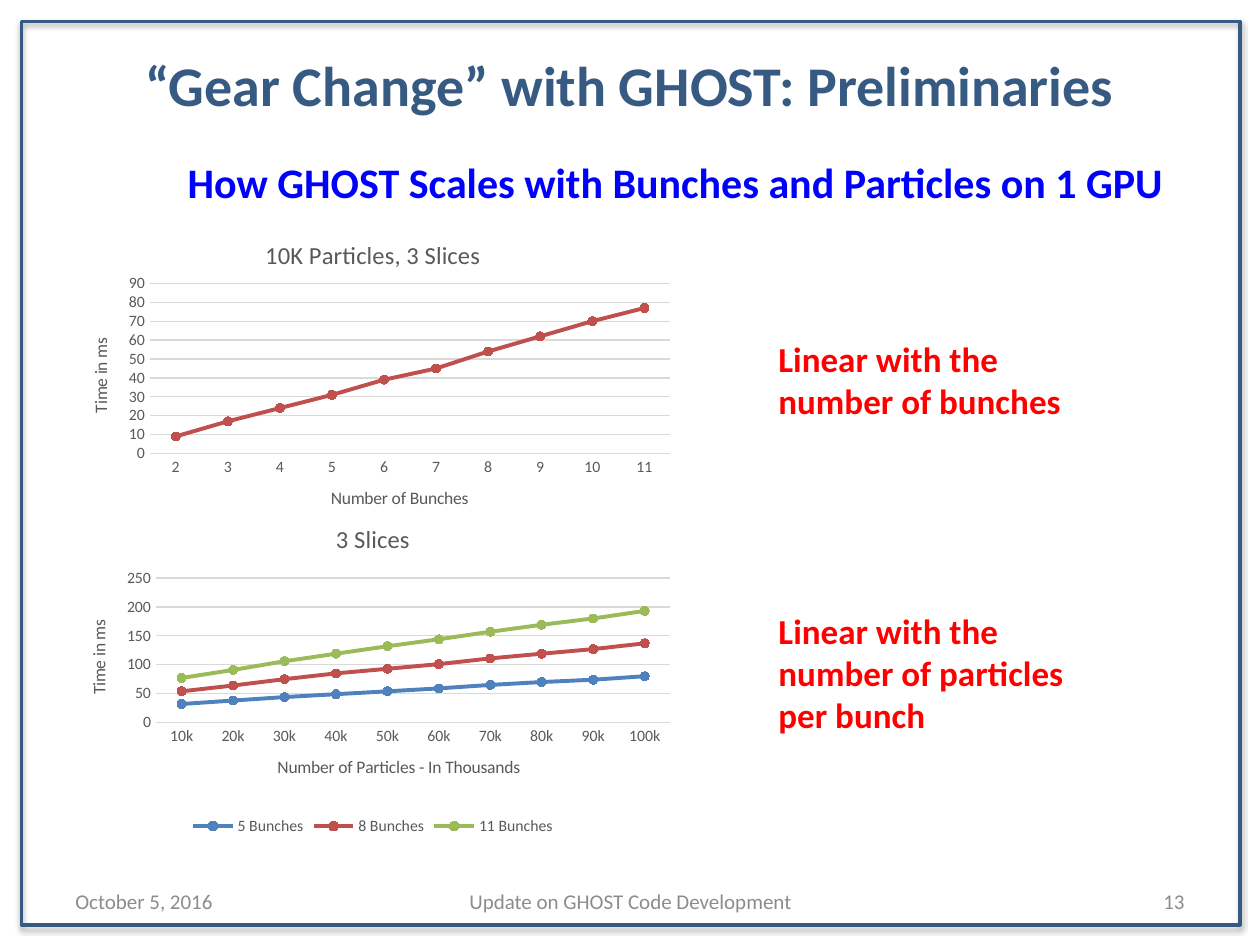
from lxml import etree
from pptx import Presentation
from pptx.chart.data import CategoryChartData
from pptx.dml.color import RGBColor
from pptx.enum.chart import XL_CHART_TYPE, XL_LEGEND_POSITION, XL_MARKER_STYLE, XL_TICK_MARK
from pptx.enum.shapes import MSO_SHAPE
from pptx.enum.text import MSO_ANCHOR, PP_ALIGN
from pptx.oxml import parse_xml
from pptx.oxml.ns import nsdecls, qn
from pptx.util import Inches, Pt

THEME = {
    "font": "Calibri",
    "navy": "365A82", "blue": "0000FF", "red": "FF0000", "footer": "8C8C8C",
    "label": "595959", "grid": "D9D9D9",
    "series_blue": "4F81BD", "series_red": "C0504D", "series_green": "9BBB59",
    "title_size": 32, "subtitle_size": 24, "note_size": 20, "footer_size": 12,
    "chart_title_size": 14, "axis_title_size": 10, "label_size": 9,
}

# Content: text box as lines, box, style, format values of the text frame
MIDDLE = {"vertical_anchor": MSO_ANCHOR.MIDDLE, "word_wrap": True}
TEXTS = [
    (["“Gear Change” with GHOST: Preliminaries"], (0, 0.36, 10, 0.64),
     ("title_size", "navy", True, PP_ALIGN.CENTER),
     {**MIDDLE, "margin_top": Inches(0.02)}),
    (["October 5, 2016"], (0.5, 6.95, 2.33, 0.4),
     ("footer_size", "footer", False, PP_ALIGN.LEFT), MIDDLE),
    (["Update on GHOST Code Development"], (3.42, 6.95, 3.17, 0.4),
     ("footer_size", "footer", False, PP_ALIGN.CENTER), MIDDLE),
    (["13"], (7.17, 6.95, 2.33, 0.4),
     ("footer_size", "footer", False, PP_ALIGN.RIGHT), MIDDLE),
    (["How GHOST Scales with Bunches and Particles on 1 GPU"], (0.08, 1.17, 9.49, 5.74),
     ("subtitle_size", "blue", True, PP_ALIGN.LEFT),
     {"word_wrap": True, "margin_left": Inches(1.41), "margin_top": Inches(0.07)}),
    (["Linear with the", "number of bunches"], (6.08, 2.63, 2.46, 0.77),
     ("note_size", "red", True, PP_ALIGN.LEFT), {"word_wrap": False}),
    (["Linear with the", "number of particles", "per bunch"], (6.08, 4.79, 2.49, 1.11),
     ("note_size", "red", True, PP_ALIGN.LEFT), {"word_wrap": False}),
]

# Content: charts, with the plot area as fractions of the chart
CHARTS = [
    {
        "title": "10K Particles, 3 Slices", "x_title": "Number of Bunches",
        "box": (0.5, 1.75, 4.92, 2.5), "plot": (0.14, 0.2, 0.84, 0.54),
        "scale": {"minimum_scale": 0, "maximum_scale": 90, "major_unit": 10},
        "categories": [str(count) for count in range(2, 12)],
        "series": [("Series 1", "series_red", [9, 17, 24, 31, 39, 45, 54, 62, 70, 77])],
        "legend": False,
    },
    {
        "title": "3 Slices", "x_title": "Number of Particles - In Thousands",
        "box": (0.5, 4, 4.92, 2.67), "plot": (0.15, 0.22, 0.83, 0.43),
        "scale": {"minimum_scale": 0, "maximum_scale": 250, "major_unit": 50},
        "categories": [f"{count}k" for count in range(10, 101, 10)],
        "series": [
            ("5 Bunches", "series_blue", [32, 38, 44, 49, 54, 59, 65, 70, 74, 80]),
            ("8 Bunches", "series_red", [54, 64, 75, 85, 93, 101, 111, 119, 127, 137]),
            ("11 Bunches", "series_green", [77, 91, 106, 119, 132, 144, 157, 169, 180, 193]),
        ],
        "legend": True,
    },
]
Y_TITLE = "Time in ms"
FRAME_BOX = (0.17, 0.17, 9.67, 7.17)


def color(name):
    return RGBColor.from_string(THEME[name])


def assign(target, values):
    for name, value in values.items():
        setattr(target, name, value)


def style_font(font, size, tint, bold=False):
    assign(font, {"name": THEME["font"], "size": Pt(THEME[size]), "bold": bold})
    font.color.rgb = color(tint)


def style_line(line, tint, width):
    line.color.rgb = color(tint)
    line.width = Pt(width)


def add_text(slide, lines, box, style, frame_format):
    size, tint, bold, align = style
    frame = slide.shapes.add_textbox(*map(Inches, box)).text_frame
    assign(frame, frame_format)
    frame.text = "\n".join(lines)
    for paragraph in frame.paragraphs:
        paragraph.alignment = align
        style_font(paragraph.runs[0].font, size, tint, bold)


def add_frame(slide):
    frame = slide.shapes.add_shape(MSO_SHAPE.RECTANGLE, *map(Inches, FRAME_BOX))
    frame.fill.background()
    style_line(frame.line, "navy", 2)
    frame.shadow.inherit = False
    effects = frame.element.spPr.find(qn("a:effectLst"))
    effects.append(parse_xml(
        f'<a:outerShdw {nsdecls("a")} blurRad="40000" dist="23000" dir="5400000" rotWithShape="0">'
        '<a:srgbClr val="000000"><a:alpha val="35000"/></a:srgbClr></a:outerShdw>'))


def set_title(owner, text, size):
    owner.has_title = True
    set_caption(owner.chart_title, text, size)


def set_caption(title, text, size):
    title.text_frame.text = text
    style_font(title.text_frame.paragraphs[0].runs[0].font, size, "label")


def place_plot(chart, fractions):
    plot_area = next(chart.element.iter(qn("c:plotArea")))
    for automatic in plot_area.findall(qn("c:layout")):
        plot_area.remove(automatic)
    layout = parse_xml(f'<c:layout {nsdecls("c")}><c:manualLayout/></c:layout>')
    settings = [("layoutTarget", "inner"), ("xMode", "edge"), ("yMode", "edge")]
    settings += zip("xywh", map(str, fractions))
    for name, value in settings:
        etree.SubElement(layout[0], qn(f"c:{name}")).set("val", value)
    plot_area.insert(0, layout)


def add_line_chart(slide, content):
    data = CategoryChartData(number_format="0")
    data.categories = content["categories"]
    for name, _, values in content["series"]:
        data.add_series(name, values)
    chart = slide.shapes.add_chart(
        XL_CHART_TYPE.LINE_MARKERS, *map(Inches, content["box"]), data).chart
    style_font(chart.font, "axis_title_size", "label")
    set_title(chart, content["title"], "chart_title_size")
    chart.plots[0].vary_by_categories = False
    place_plot(chart, content["plot"])

    # Axes
    axes = ((chart.category_axis, content["x_title"]), (chart.value_axis, Y_TITLE))
    for axis, caption in axes:
        axis.has_title = True
        set_caption(axis.axis_title, caption, "axis_title_size")
        assign(axis, {"major_tick_mark": XL_TICK_MARK.NONE, "minor_tick_mark": XL_TICK_MARK.NONE})
        style_font(axis.tick_labels.font, "label_size", "label")
    style_line(chart.category_axis.format.line, "grid", 0.75)
    assign(chart.value_axis, {"has_major_gridlines": True, **content["scale"]})
    chart.value_axis.format.line.fill.background()
    style_line(chart.value_axis.major_gridlines.format.line, "grid", 0.75)

    # Series
    for series, (_, tint, _) in zip(chart.plots[0].series, content["series"]):
        series.smooth = False
        style_line(series.format.line, tint, 2.25)
        assign(series.marker, {"style": XL_MARKER_STYLE.CIRCLE, "size": 5})
        series.marker.format.fill.solid()
        series.marker.format.fill.fore_color.rgb = color(tint)
        style_line(series.marker.format.line, tint, 0.75)

    # Legend
    chart.has_legend = content["legend"]
    if content["legend"]:
        assign(chart.legend, {"position": XL_LEGEND_POSITION.BOTTOM, "include_in_layout": False})
        style_font(chart.legend.font, "label_size", "label")


def main():
    deck = Presentation()
    assign(deck, {"slide_width": Inches(10), "slide_height": Inches(7.5)})
    slide = deck.slides.add_slide(deck.slide_layouts[6])
    # Headings and footer, then frame and charts, then the side notes
    for text in TEXTS[:5]:
        add_text(slide, *text)
    add_frame(slide)
    for content in CHARTS:
        add_line_chart(slide, content)
    for text in TEXTS[5:]:
        add_text(slide, *text)
    deck.save("out.pptx")


if __name__ == "__main__":
    main()
